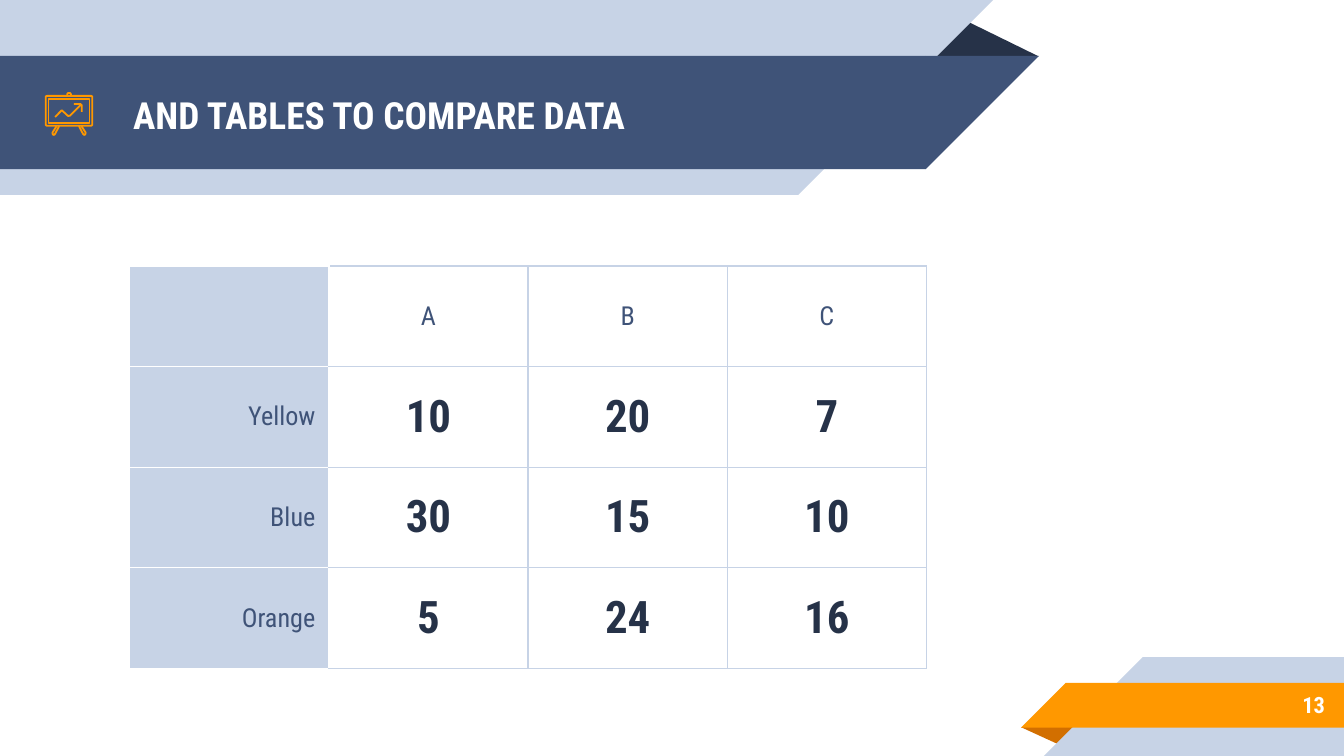
from lxml import etree
from pptx import Presentation
from pptx.dml.color import RGBColor
from pptx.enum.shapes import MSO_SHAPE as SHAPE
from pptx.enum.text import MSO_ANCHOR as ANCHOR, PP_ALIGN as ALIGN
from pptx.oxml.ns import qn
from pptx.util import Pt

FONT = "Roboto Condensed"
PALE, BLUE, NAVY = "C7D3E6", "3F5378", "263248"
ORANGE, BROWN, WHITE = "FF9800", "D26F00", "FFFFFF"
HEADING = {"size": Pt(20), "bold": True, "color": WHITE}
LABEL = {"size": Pt(14), "bold": False, "color": BLUE}
VALUE = {"size": Pt(24), "bold": True, "color": NAVY}
PAGE = {"size": Pt(12), "bold": True, "color": WHITE}

ROWS = [
    ["", "A", "B", "C"],
    ["Yellow", "10", "20", "7"],
    ["Blue", "30", "15", "10"],
    ["Orange", "5", "24", "16"],
]


def rgb(value):
    return RGBColor.from_string(value)


def add_part(shapes, kind, box, color, rotation=0):
    sp = shapes.add_shape(kind, *(Pt(v) for v in box))
    sp.shadow.inherit = False
    sp.fill.solid()
    sp.fill.fore_color.rgb = rgb(color)
    sp.line.fill.background()
    sp.rotation = rotation
    return sp


def add_fold(shapes, box, color, rotation=0):
    sp = add_part(shapes, SHAPE.ISOSCELES_TRIANGLE, box, color, rotation)
    sp.adjustments[0] = 0.324


def add_right_band(shapes, x, y, w, h, color):
    """Band whose right end is cut at 45 degrees; w is its top edge."""
    add_part(shapes, SHAPE.RECTANGLE, (x, y, w - h, h), color)
    add_part(shapes, SHAPE.RIGHT_TRIANGLE, (x + w - h, y, h, h), color, 90)


def add_left_band(shapes, x, y, w, h, color):
    """Band whose left end is cut at 45 degrees; w is its bottom edge."""
    add_part(shapes, SHAPE.RECTANGLE, (x + h, y, w - h, h), color)
    add_part(shapes, SHAPE.RIGHT_TRIANGLE, (x, y, h, h), color, 270)


def write(tf, text, style, align):
    p = tf.paragraphs[0]
    p.alignment = align
    r = p.add_run()
    r.text = text
    r.font.name = FONT
    for name, value in style.items():
        if name == "color":
            r.font.color.rgb = rgb(value)
        else:
            setattr(r.font, name, value)


def add_text(shapes, box, text, style, align):
    tf = shapes.add_textbox(*(Pt(v) for v in box)).text_frame
    tf.word_wrap = True
    tf.vertical_anchor = ANCHOR.MIDDLE
    for side in ("left", "top", "right", "bottom"):
        setattr(tf, f"margin_{side}", Pt(7.2))
    write(tf, text, style, align)


def add_header(slide, x, y):
    shapes = slide.shapes.add_group_shape().shapes
    add_fold(shapes, (x + 495.5, y + 10, 61, 20.2), NAVY)
    add_right_band(shapes, x, y, 532, 104.4, PALE)
    add_right_band(shapes, x, y + 30, 556.6, 60.6, BLUE)
    add_text(slide.shapes, (x + 64.2, y + 31, 414, 60.5),
             "AND TABLES TO COMPARE DATA", HEADING, ALIGN.LEFT)


def add_footer(slide, x, y):
    shapes = slide.shapes.add_group_shape().shapes
    add_fold(shapes, (x, y + 37.6, 31, 9.6), BROWN, 180)
    add_left_band(shapes, x + 12.3, y, 160.7, 53, PALE)
    add_left_band(shapes, x, y + 13.8, 173, 24, ORANGE)
    add_text(slide.shapes, (x + 52.5, y + 13, 117.4, 25.2),
             "13", PAGE, ALIGN.RIGHT)


def add_outline(shapes, x, y, points, close=False):
    points = [(Pt(x + px), Pt(y + py)) for px, py in points]
    builder = shapes.build_freeform(*points[0])
    builder.add_line_segments(points[1:], close=close)
    sp = builder.convert_to_shape()
    sp.shadow.inherit = False
    sp.fill.background()
    sp.line.color.rgb = rgb(ORANGE)
    sp.line.width = Pt(0.96)


def add_board_icon(slide, x, y):
    shapes = slide.shapes.add_group_shape().shapes
    w = 25
    frame = [(0.5, 1.6), (w - 0.5, 1.6), (w, 2.1), (w, 17.1),
             (w - 0.5, 17.6), (0.5, 17.6), (0, 17.1), (0, 2.1)]
    screen = [(1.5, 3.1), (w - 1.5, 3.1), (w - 1.5, 16.3), (1.5, 16.3)]
    knob = [(11.5, 1.5), (11.5, 0.6), (12, 0), (13, 0), (13.5, 0.6), (13.5, 1.5)]
    leg = [(5.8, 17.8), (3.6, 21.3), (3.8, 22.3), (4.5, 22.5),
           (5, 22), (7.2, 17.8)]
    trend = [(18.7, 6.5), (13, 12.2), (12, 12.4), (8.6, 9.3), (5, 12.9)]
    arrow = [(15.1, 5.9), (18.6, 5.9), (19.3, 6.6), (19.3, 10.1)]
    for points in (frame, screen):
        add_outline(shapes, x, y, points, close=True)
    mirrored_leg = [(w - px, py) for px, py in leg]
    for points in (knob, leg, mirrored_leg, trend, arrow):
        add_outline(shapes, x, y, points)


def set_border(cell, side, color):
    ln = etree.SubElement(cell._tc.get_or_add_tcPr(), qn(f"a:ln{side}"), w=str(Pt(0.75)))
    fill = etree.SubElement(ln, qn("a:solidFill"))
    etree.SubElement(fill, qn("a:srgbClr"), val=color)


def add_data_table(slide, x, y, w, h):
    n_rows, n_cols = len(ROWS), len(ROWS[0])
    table = slide.shapes.add_table(
        n_rows, n_cols, Pt(x), Pt(y), Pt(w), Pt(h)).table
    table.first_row = table.horz_banding = False
    for i, row in enumerate(ROWS):
        for j, text in enumerate(row):
            cell = table.cell(i, j)
            for side in "LRTB":
                white = j == 0 or (j == 1 and side == "L")
                set_border(cell, side, WHITE if white else PALE)
            if j == 0:
                cell.fill.solid()
                cell.fill.fore_color.rgb = rgb(PALE)
            else:
                cell.fill.background()
            cell.vertical_anchor = ANCHOR.MIDDLE
            cell.margin_top = cell.margin_bottom = Pt(5)
            if text:
                write(cell.text_frame, text, VALUE if i and j else LABEL,
                      ALIGN.CENTER if j else ALIGN.RIGHT)


def main():
    prs = Presentation()
    prs.slide_width, prs.slide_height = Pt(720), Pt(405)
    slide = prs.slides.add_slide(prs.slide_layouts[6])
    add_header(slide, 0, 0)
    add_footer(slide, 547, 352)
    add_data_table(slide, 69.5, 142.5, 426.8, 215.6)
    add_board_icon(slide, 24.5, 49.8)
    prs.save("out.pptx")


if __name__ == "__main__":
    main()
